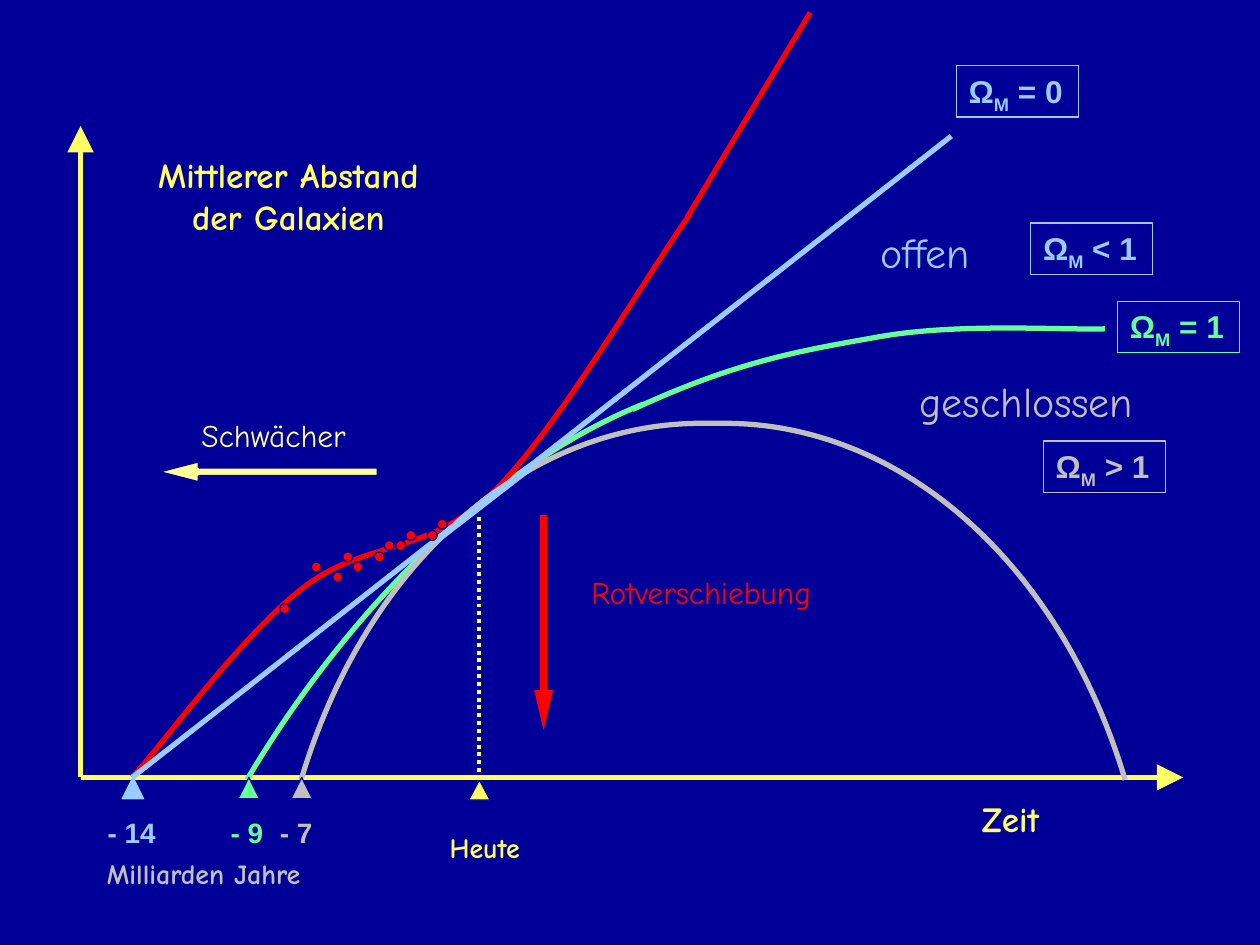
from dataclasses import dataclass

from lxml import etree
from pptx import Presentation
from pptx.dml.color import RGBColor
from pptx.enum.dml import MSO_LINE_DASH_STYLE as Dash
from pptx.enum.shapes import MSO_CONNECTOR as Connector, MSO_SHAPE as Shape
from pptx.enum.text import MSO_ANCHOR as Anchor, MSO_AUTO_SIZE as AutoSize, PP_ALIGN as Align
from pptx.oxml.ns import qn
from pptx.util import Inches, Pt


@dataclass(frozen=True)
class Theme:
    background: str = "000099"
    axis: str = "FFFF66"
    fainter: str = "FFFF99"
    accelerated: str = "FF0000"
    open: str = "99CCFF"
    flat: str = "66FF99"
    closed: str = "C0C0C0"
    hand: str = "Comic Neue"
    formula: str = "Arial"
    region: int = 24
    heading: int = 20
    label: int = 18
    tick: int = 16
    curve: float = 3
    hairline: float = 0.75


THEME = Theme()
ORIGIN = (0.64, 6.17)
BIG_BANG = (1.05, 6.17)
DOT = 0.08
SUPERNOVAE = [
    (3.39, 4.21), (3.22, 4.21), (3.14, 4.29), (2.80, 4.46), (2.64, 4.54), (2.47, 4.46),
    (2.97, 4.38), (3.47, 4.12), (2.72, 4.38), (3.05, 4.29), (2.22, 4.79),
]


def rgb(color):
    return RGBColor.from_string(color)


def style_line(line, color, width):
    line.color.rgb = rgb(color)
    line.width = Pt(width)


def write(frame, text, *, color, size, font=THEME.hand, bold=False, align=Align.LEFT, wrap=False):
    """Fill a text frame; the part between underscores becomes a subscript."""
    frame.word_wrap = wrap
    frame.auto_size = AutoSize.SHAPE_TO_FIT_TEXT
    paragraph = frame.paragraphs[0]
    paragraph.alignment = align
    for index, part in enumerate(text.split("_")):
        run = paragraph.add_run()
        run.text = part
        run.font.name = font
        run.font.size = Pt(size)
        run.font.bold = bold
        run.font.color.rgb = rgb(color)
        if index % 2:
            run.font._element.set("baseline", "-25000")


def add_label(slide, box, text, **text_format):
    label = slide.shapes.add_textbox(*map(Inches, box))
    write(label.text_frame, text, **text_format)


def add_solid(slide, kind, box, color, outline=THEME.background, width=THEME.hairline, adjust=()):
    solid = slide.shapes.add_shape(kind, *map(Inches, box))
    solid.shadow.inherit = False
    solid.fill.solid()
    solid.fill.fore_color.rgb = rgb(color)
    style_line(solid.line, outline, width)
    for index, value in enumerate(adjust):
        solid.adjustments[index] = value


def add_density(slide, left, top, relation, color):
    """Framed condition on the matter density."""
    frame = slide.shapes.add_shape(Shape.RECTANGLE, *map(Inches, (left, top, 0.97, 0.41)))
    frame.shadow.inherit = False
    frame.fill.background()
    style_line(frame.line, color, THEME.hairline)
    frame.text_frame.vertical_anchor = Anchor.TOP
    write(frame.text_frame, f"Ω_M_ {relation}", color=color, size=THEME.label,
          font=THEME.formula, bold=True)


def add_line(slide, start, end, color, width=THEME.curve, dash=None, arrow=False):
    line = slide.shapes.add_connector(Connector.STRAIGHT, *map(Inches, (*start, *end)))
    style_line(line.line, color, width)
    if dash:
        line.line.dash_style = dash
    properties = line._element.spPr
    if arrow:
        etree.SubElement(properties.find(qn("a:ln")), qn("a:tailEnd"),
                         type="triangle", w="lg", len="lg")
    etree.SubElement(properties, qn("a:effectLst"))


def add_curve(slide, start, *points, color, center=None):
    """Cubic curve, three points a segment; its frame also reaches to the arc's center."""
    builder = slide.shapes.build_freeform(*map(Inches, start))
    builder.add_line_segments([tuple(map(Inches, point)) for point in points], close=False)
    if center:
        builder.move_to(*map(Inches, center))
    curve = builder.convert_to_shape()
    curve.shadow.inherit = False
    curve.fill.background()
    style_line(curve.line, color, THEME.curve)

    steps = list(curve._element.iter(qn("a:lnTo")))
    for first in range(0, len(steps), 3):
        segment = etree.Element(qn("a:cubicBezTo"))
        steps[first].addprevious(segment)
        for step in steps[first:first + 3]:
            segment.append(step[0])
            step.getparent().remove(step)


def add_axes(slide):
    add_line(slide, ORIGIN, (0.64, 1), THEME.axis, arrow=True)
    add_line(slide, ORIGIN, (9.39, 6.17), THEME.axis, arrow=True)
    heading = dict(color=THEME.axis, size=THEME.heading, bold=True, align=Align.CENTER)
    add_label(slide, (0.92, 1.17, 2.74, 0.77), "Mittlerer Abstand der Galaxien", wrap=True, **heading)
    add_label(slide, (7.64, 6.28, 0.76, 0.43), "Zeit", **heading)


def add_today(slide):
    add_label(slide, (3.47, 6.54, 0.84, 0.37), "Heute", color=THEME.axis, size=THEME.tick, bold=True)
    add_solid(slide, Shape.ISOSCELES_TRIANGLE, (3.72, 6.19, 0.17, 0.16), THEME.axis)
    add_line(slide, (3.8, 6.19), (3.8, 4.08), THEME.axis, 2.25, Dash.ROUND_DOT)


def add_observation_arrows(slide):
    add_solid(slide, Shape.LEFT_ARROW, (1.25, 3.66, 1.75, 0.17), THEME.fainter,
              width=1.5, adjust=(0.417, 1.938))
    add_label(slide, (1.5, 3.25, 1.48, 0.4), "Schwächer", color=THEME.fainter, size=THEME.label)
    add_solid(slide, Shape.DOWN_ARROW, (4.23, 4.08, 0.17, 1.75), THEME.accelerated,
              width=1, adjust=(0.417, 2.125))
    add_label(slide, (4.5, 4.5, 2.13, 0.4), "Rotverschiebung", color=THEME.accelerated,
              size=THEME.label, align=Align.CENTER)


def add_flat_model(slide):
    add_density(slide, 8.87, 2.39, "= 1", THEME.flat)
    add_curve(slide, (5.02, 3.25), (5.82, 2.88), (6.31, 2.79), (6.94, 2.68),
              (7.57, 2.56), (8.39, 2.62), (8.77, 2.61), color=THEME.flat)
    add_curve(slide, (5.1, 3.21), (3.98, 3.66), (2.81, 4.76), (1.96, 6.19),
              color=THEME.flat, center=(4.34, 7.67))


def add_accelerated_model(slide):
    add_curve(slide, BIG_BANG, (1.28, 5.92), (1.92, 5.04), (2.4, 4.67),
              (2.88, 4.29), (3.4, 4.41), (3.91, 3.91),
              (4.42, 3.42), (5.14, 2.17), (5.47, 1.71), color=THEME.accelerated)
    add_line(slide, (5.45, 1.73), (6.43, 0.1), THEME.accelerated)


def add_closed_model(slide):
    turning_point, top = 5.66, 3.36
    for side in (-1, 1):
        inner, shoulder, outer, end = (turning_point + side * reach
                                       for reach in (0.03, 0.09, 1.5, 3.27))
        middle = turning_point + side * 2.76
        add_curve(slide, (turning_point, top), (inner, top), (2 * inner - turning_point, top),
                  (shoulder, top), (outer, top), (middle, 4.48), (end, 6.19),
                  color=THEME.closed, center=(shoulder, 7.79))
    add_label(slide, (7.2, 2.93, 2.05, 0.51), "geschlossen", color=THEME.closed, size=THEME.region)
    add_density(slide, 8.28, 3.5, "> 1", THEME.closed)


def add_open_models(slide):
    add_label(slide, (6.89, 1.75, 1.08, 0.51), "offen", color=THEME.open, size=THEME.region)
    add_density(slide, 8.18, 1.77, "< 1", THEME.open)
    add_line(slide, BIG_BANG, (7.55, 1.08), THEME.open)
    add_density(slide, 7.59, 0.52, "= 0", THEME.open)
    add_line(slide, (3.47, 4.29), (4.22, 3.71), THEME.open)


def add_ages(slide):
    ages = [("- 14", 0.97, 0.75, 0.59, THEME.open, THEME.open),
            ("- 9", 1.89, 1.73, 0.46, THEME.flat, THEME.background),
            ("- 7", 2.31, 2.12, 0.46, THEME.closed, THEME.background)]
    for age, marker_left, left, width, color, outline in ages:
        add_solid(slide, Shape.ISOSCELES_TRIANGLE, (marker_left, 6.17, 0.17, 0.17), color, outline)
        add_label(slide, (left, 6.42, width, 0.37), age, color=color, size=THEME.tick,
                  font=THEME.formula, bold=True, align=Align.CENTER)
    add_label(slide, (0.75, 6.75, 1.98, 0.37), "Milliarden Jahre", color=THEME.closed,
              size=THEME.tick, bold=True)


def main():
    deck = Presentation()
    deck.slide_width, deck.slide_height = Inches(10), Inches(7.5)
    slide = deck.slides.add_slide(deck.slide_layouts[6])
    slide.background.fill.solid()
    slide.background.fill.fore_color.rgb = rgb(THEME.background)
    add_axes(slide)
    add_today(slide)
    add_observation_arrows(slide)
    add_flat_model(slide)
    add_accelerated_model(slide)
    add_closed_model(slide)
    add_open_models(slide)
    for left, top in SUPERNOVAE:
        add_solid(slide, Shape.OVAL, (left, top, DOT, DOT), THEME.accelerated)
    add_ages(slide)
    deck.save("out.pptx")


if __name__ == "__main__":
    main()
